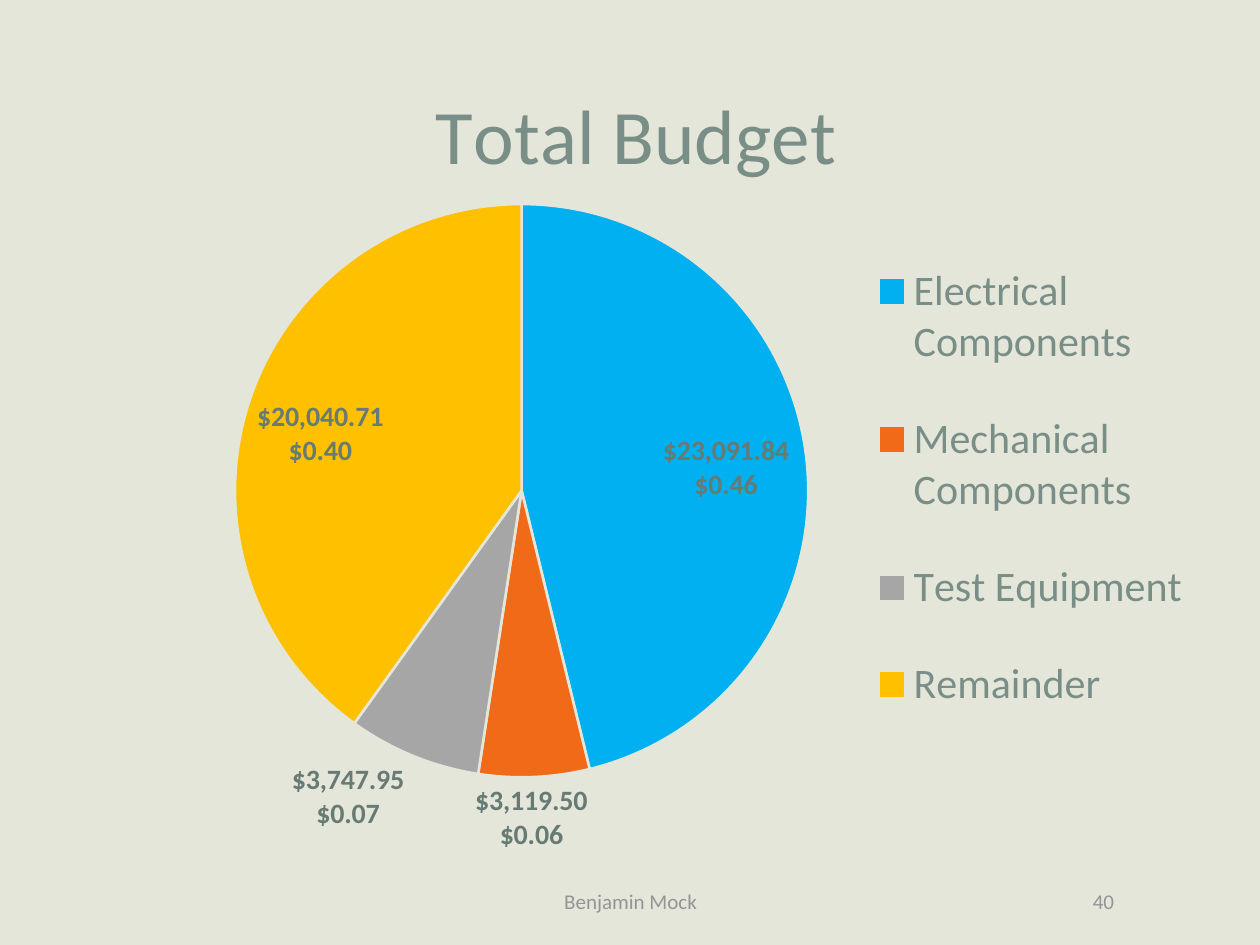
"""Build the Total Budget slide: a pie chart with a footer."""
from dataclasses import dataclass

from lxml.etree import SubElement
from pptx import Presentation
from pptx.chart.chart import Chart
from pptx.chart.data import CategoryChartData
from pptx.dml.color import RGBColor
from pptx.enum.chart import XL_CHART_TYPE, XL_LABEL_POSITION, XL_LEGEND_POSITION
from pptx.enum.text import MSO_ANCHOR, PP_ALIGN
from pptx.oxml.ns import qn
from pptx.util import Emu, Inches, Pt

SLIDE_WIDTH, SLIDE_HEIGHT = Inches(10), Inches(7.5)
FONT = "Calibri"
BACKGROUND, HEADING, LABEL, MUTED = "E5E6DA", "798E87", "677A73", "929594"
CURRENCY = '"$"#,##0.00_);[Red]\\("$"#,##0.00\\)'


@dataclass(frozen=True)
class Area:
    """A rectangle in percent of the slide's width and height."""
    left: float
    top: float
    width: float
    height: float

    def lengths(self) -> tuple:
        """Return left, top, width and height as slide lengths."""
        return (Emu(int(SLIDE_WIDTH * self.left / 100)), Emu(int(SLIDE_HEIGHT * self.top / 100)),
                Emu(int(SLIDE_WIDTH * self.width / 100)), Emu(int(SLIDE_HEIGHT * self.height / 100)))


@dataclass(frozen=True)
class Expense:
    """One slice of the budget."""
    name: str
    amount: float
    color: str


@dataclass(frozen=True)
class FooterItem:
    """One text in the footer row."""
    text: str
    left: float
    width: float
    align: PP_ALIGN


CHART_AREA = Area(0.8, 2.27, 97.7, 90.13)
TITLE_AREA = Area(33.5, 7.2, 33, 10)
PIE_AREA = Area(18.65, 21.6, 45.5, 60.67)
LEGEND_AREA = Area(68.8, 23.3, 26, 56.7)

EXPENSES = [
    Expense("Electrical Components", 23091.84, "00B0F0"),
    Expense("Mechanical Components", 3119.50, "F06A18"),
    Expense("Test Equipment", 3747.95, "A6A6A6"),
    Expense("Remainder", 20040.71, "FFC000"),
]
FOOTER = [
    FooterItem("Benjamin Mock", 26.7, 46.7, PP_ALIGN.CENTER),
    FooterItem("40", 73.3, 16.1, PP_ALIGN.RIGHT),
]


def rgb(color: str) -> RGBColor:
    """Turn a hex string into a colour."""
    return RGBColor.from_string(color)


def set_font(font, size: float, color: str, bold: bool = False) -> None:
    """Format a font."""
    font.name, font.size, font.bold = FONT, Pt(size), bold
    font.color.rgb = rgb(color)


def write(frame, text: str, *, size: float, color: str, align=PP_ALIGN.CENTER) -> None:
    """Write one formatted paragraph into a text frame."""
    para = frame.paragraphs[0]
    para.alignment = align
    span = para.add_run()
    span.text = text
    set_font(span.font, size, color)


def place_in_chart(element, area: Area, sized: bool = True, inner: bool = False) -> None:
    """Give a chart part a manual layout that covers a slide area."""
    for old in element.findall(qn("c:layout")):
        element.remove(old)
    layout = SubElement(element, qn("c:layout"))
    overlay = element.find(qn("c:overlay"))
    if overlay is None:
        element.insert(0, layout)
    else:
        overlay.addprevious(layout)
    settings = {"layoutTarget": "inner"} if inner else {}
    settings |= {"xMode": "edge", "yMode": "edge",
                 "x": (area.left - CHART_AREA.left) / CHART_AREA.width,
                 "y": (area.top - CHART_AREA.top) / CHART_AREA.height}
    if sized:
        settings |= {"w": area.width / CHART_AREA.width, "h": area.height / CHART_AREA.height}
    manual = SubElement(layout, qn("c:manualLayout"))
    for name, value in settings.items():
        SubElement(manual, qn(f"c:{name}")).set("val", str(value))


def format_slices(chart: Chart) -> None:
    """Colour the slices and label them with amount and percentage."""
    plot = chart.plots[0]
    plot.vary_by_categories = True
    for index, expense in enumerate(EXPENSES):
        form = plot.series[0].points[index].format
        form.fill.solid()
        form.fill.fore_color.rgb = rgb(expense.color)
        form.line.color.rgb = rgb(BACKGROUND)
        form.line.width = Pt(1.5)
    labels = plot.series[0].data_labels
    labels.show_value = labels.show_percentage = True
    labels.number_format, labels.number_format_is_linked = CURRENCY, False
    labels.position = XL_LABEL_POSITION.BEST_FIT
    set_font(labels.font, 16, LABEL, bold=True)
    element = labels._element
    separator = SubElement(element, qn("c:separator"))
    separator.text = "\n"
    element.find(qn("c:showBubbleSize")).addnext(separator)


def add_budget_chart(page) -> None:
    """Add the pie chart with its title and legend."""
    data = CategoryChartData(number_format=CURRENCY)
    data.categories = [expense.name for expense in EXPENSES]
    data.add_series("Total Budget", [expense.amount for expense in EXPENSES])
    chart = page.shapes.add_chart(XL_CHART_TYPE.PIE, *CHART_AREA.lengths(), data).chart
    set_font(chart.font, 10, "3C4743")
    format_slices(chart)
    chart.has_title = chart.has_legend = True
    write(chart.chart_title.text_frame, "Total Budget", size=44, color=HEADING)
    chart.legend.position = XL_LEGEND_POSITION.RIGHT
    chart.legend.include_in_layout = False
    set_font(chart.legend.font, 24, HEADING)
    space = chart._chartSpace
    place_in_chart(space.find(".//" + qn("c:title")), TITLE_AREA, sized=False)
    place_in_chart(space.find(".//" + qn("c:plotArea")), PIE_AREA, inner=True)
    place_in_chart(space.find(".//" + qn("c:legend")), LEGEND_AREA)


def add_footer_item(page, item: FooterItem) -> None:
    """Add one text box in the footer row."""
    area = Area(item.left, 92.67, item.width, 5.33)
    frame = page.shapes.add_textbox(*area.lengths()).text_frame
    frame.word_wrap = True
    frame.vertical_anchor = MSO_ANCHOR.MIDDLE
    write(frame, item.text, size=12, color=MUTED, align=item.align)


def main() -> None:
    """Build and save the deck."""
    deck = Presentation()
    deck.slide_width, deck.slide_height = SLIDE_WIDTH, SLIDE_HEIGHT
    page = deck.slides.add_slide(deck.slide_layouts[6])
    page.background.fill.solid()
    page.background.fill.fore_color.rgb = rgb(BACKGROUND)
    add_budget_chart(page)
    for item in FOOTER:
        add_footer_item(page, item)
    deck.save("out.pptx")


if __name__ == "__main__":
    main()
